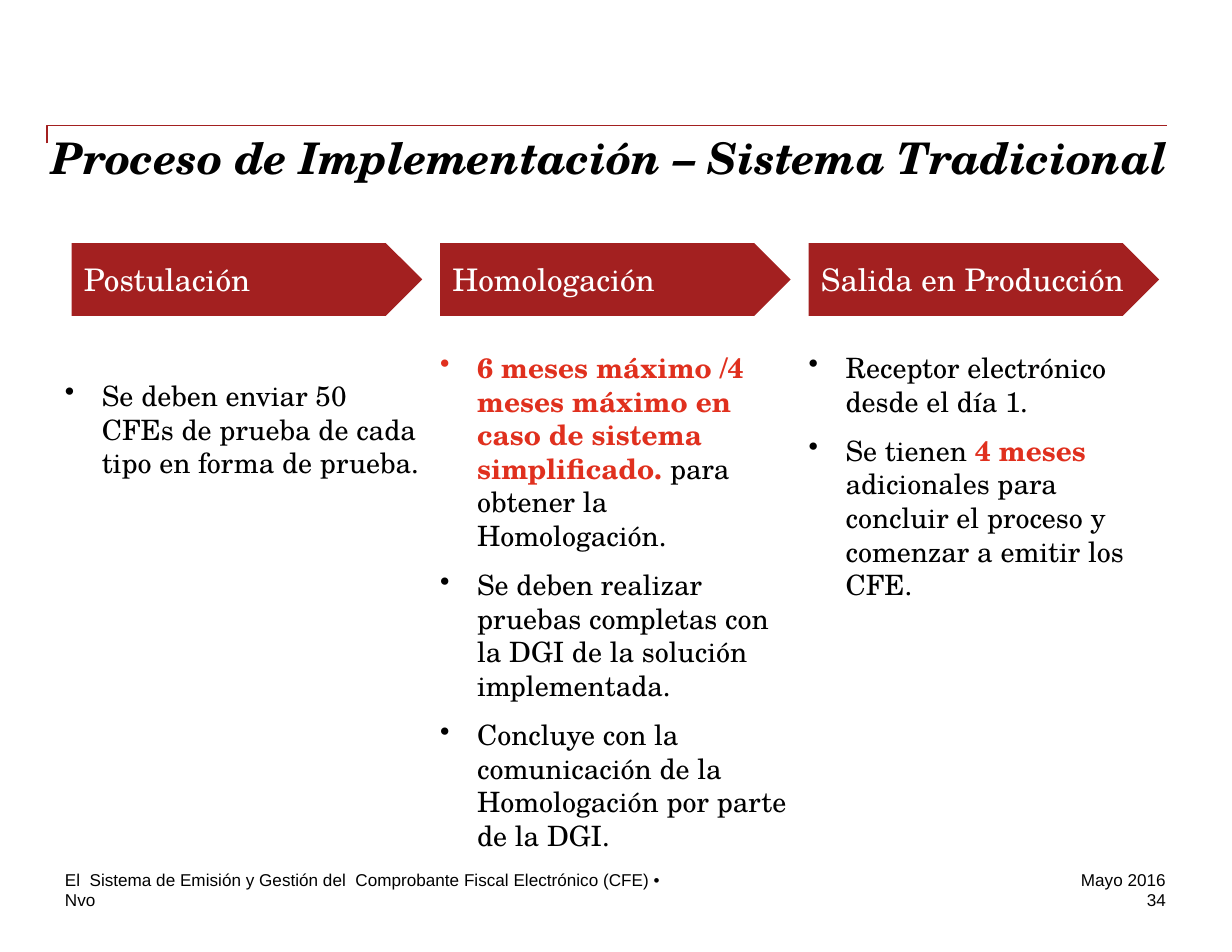
from lxml.etree import SubElement
from pptx import Presentation
from pptx.dml.color import RGBColor
from pptx.enum.shapes import MSO_CONNECTOR as Link, MSO_SHAPE as Shape
from pptx.enum.text import MSO_ANCHOR as Anchor, PP_ALIGN as Align
from pptx.oxml.ns import qn
from pptx.util import Inches, Pt

RED = RGBColor(0xA3, 0x20, 0x20)
BRIGHT = RGBColor(0xE0, 0x30, 0x1E)
BLACK = RGBColor(0, 0, 0)
WHITE = RGBColor(0xFF, 0xFF, 0xFF)
SERIF, SANS = "TeX Gyre Schola", "Arial"

# Content: runs between asterisks are stressed
TITLE = "Proceso de Implementación – Sistema Tradicional"
# heading, arrow left, text left, text top, text width, bullets
STEPS = [
    ("Postulación", 0.64, 0.58, 3.38, 3.17, [
        "Se deben enviar 50 CFEs de prueba de cada tipo en forma de prueba."]),
    ("Homologación", 3.93, 3.93, 3.13, 3.12, [
        "*6 meses máximo /4 meses máximo en caso de sistema simplificado. *"
        "para obtener la Homologación.",
        "Se deben realizar pruebas completas con la DGI de la solución "
        "implementada.",
        "Concluye con la comunicación de la Homologación por parte de la DGI."]),
    ("Salida en Producción", 7.22, 7.22, 3.13, 3.12, [
        "Receptor electrónico desde el día 1.",
        "Se tienen *4 meses *adicionales para concluir el proceso y comenzar "
        "a emitir los CFE."]),
]
# text, left, top, width, alignment
FOOT = [
    ("El  Sistema de Emisión y Gestión del  Comprobante Fiscal Electrónico "
     "(CFE) •", 0.58, 7.76, 5.6, Align.LEFT),
    ("Nvo", 0.58, 7.94, 1.4, Align.LEFT),
    ("Mayo 2016", 9.01, 7.76, 1.4, Align.RIGHT),
    ("34", 9.01, 7.94, 1.4, Align.RIGHT),
]

deck = Presentation()
deck.slide_width, deck.slide_height = Inches(11), Inches(8.5)
slide = deck.slides.add_slide(deck.slide_layouts[6])
shapes = slide.shapes


def set_frame(frame, x=0, y=0):
    frame.word_wrap = True
    for side, gap in dict(left=x, right=x, top=y, bottom=y).items():
        setattr(frame, "margin_" + side, Inches(gap))
    return frame


def add_box(left, top, width, height):
    box = shapes.add_textbox(*map(Inches, (left, top, width, height)))
    return set_frame(box.text_frame)


def add_run(para, text, color=BLACK, **style):
    run = para.add_run()
    run.text = text
    run.font.color.rgb = color
    for key, value in style.items():
        setattr(run.font, key, value)


def add_bullet(para):
    props = para._p.get_or_add_pPr()
    props.set("marL", str(Inches(0.33)))
    props.set("indent", str(-Inches(0.33)))
    SubElement(props, qn("a:buChar")).set("char", "•")


# Title rule with its short left leg
rule = shapes.add_connector(Link.ELBOW, *map(Inches, (0.42, 1.28, 10.42, 1.12)))
rule.line.color.rgb = RED
rule.line.width = Pt(1)
geom = rule._element.spPr.find(qn("a:prstGeom"))
bend = SubElement(geom.find(qn("a:avLst")), qn("a:gd"))
bend.set("name", "adj1")
bend.set("fmla", "val 0")
SubElement(rule._element.spPr, qn("a:effectLst"))

# Title
add_run(add_box(0.46, 1.17, 10.08, 0.63).paragraphs[0], TITLE,
        name=SERIF, size=Pt(28), bold=True, italic=True)

# Steps: arrow with heading, bullets below
for head, x, left, top, width, points in STEPS:
    arrow = shapes.add_shape(Shape.PENTAGON,
                             *map(Inches, (x, 2.17, 3.13, 0.65)))
    arrow.shadow.inherit = False
    arrow.fill.solid()
    arrow.fill.fore_color.rgb = RED
    arrow.line.fill.background()
    frame = set_frame(arrow.text_frame, 0.11, 0.06)
    frame.vertical_anchor = Anchor.MIDDLE
    frame.paragraphs[0].alignment = Align.LEFT
    add_run(frame.paragraphs[0], head, WHITE, name=SERIF, size=Pt(20))

    frame = add_box(left, top, width, 7.65 - top)
    for i, point in enumerate(points):
        para = frame.add_paragraph() if i else frame.paragraphs[0]
        para.space_after = Pt(10)
        add_bullet(para)
        for j, part in enumerate(point.split("*")):
            if part:
                add_run(para, part, BRIGHT if j % 2 else BLACK,
                        name=SERIF, size=Pt(18), bold=j % 2 == 1)

# Footer
for text, left, top, width, align in FOOT:
    para = add_box(left, top, width, 0.19).paragraphs[0]
    para.alignment = align
    add_run(para, text, name=SANS, size=Pt(11))

deck.save("out.pptx")
